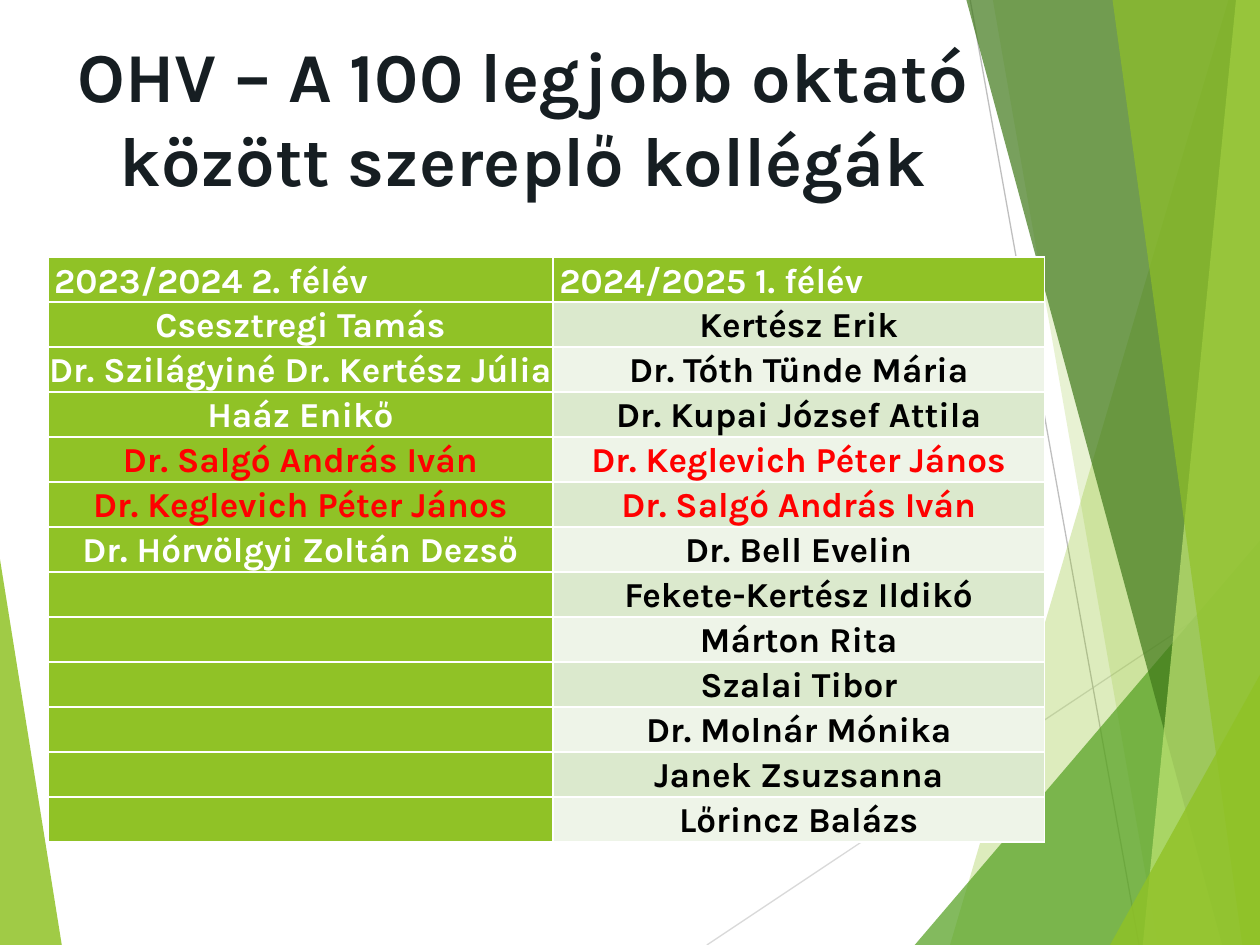
from typing import NamedTuple

from lxml import etree
from pptx import Presentation
from pptx.dml.color import RGBColor
from pptx.enum.shapes import MSO_CONNECTOR
from pptx.enum.text import MSO_ANCHOR, MSO_AUTO_SIZE, PP_ALIGN
from pptx.oxml.ns import qn
from pptx.util import Inches, Pt

STRAIGHT = MSO_CONNECTOR.STRAIGHT
TOP, MIDDLE, BOTTOM = MSO_ANCHOR.TOP, MSO_ANCHOR.MIDDLE, MSO_ANCHOR.BOTTOM
LEFT, CENTER = PP_ALIGN.LEFT, PP_ALIGN.CENTER
FIT_SHAPE = MSO_AUTO_SIZE.SHAPE_TO_FIT_TEXT

WIDTH, HEIGHT = Inches(10), Inches(7.5)
FONT = "Karla"
GREEN, WHITE, BLACK, RED = "90C226", "FFFFFF", "000000", "FF0000"
BANDS = ("DBE9CD", "EEF4E8")
COLUMN_WIDTHS = (4.01, 3.9)
ROW_HEIGHT = 0.34

Point = tuple[float, float]


class Facet(NamedTuple):
    """Corners are percentages of the slide's width and height."""
    corners: list[Point]
    color: str
    opacity: int


class Ray(NamedTuple):
    start: Point
    end: Point
    color: str


def band(top: float, bottom: float) -> list[Point]:
    """Area from a slanted left edge to the slide's right edge."""
    return [(top, 0), (bottom, 100), (100, 100), (100, 0)]


def corner(left: float, top: float) -> list[Point]:
    """Triangle in the lower right corner of the slide."""
    return [(left, 100), (100, top), (100, 100)]


LEFT_FACET = Facet([(0, 59.2), (4.9, 100), (0, 100)], GREEN, 85)
RAYS = [
    Ray((56.1, 100), (100, 61), "D9D9D9"),
    Ray((77, 0), (90.4, 100), "BFBFBF"),
]
RIGHT_FACETS = [
    Facet(band(97.5, 75.4), GREEN, 30),
    Facet(band(78.8, 91.9), GREEN, 20),
    Facet(corner(72.6, 57.2), "54A021", 72),
    Facet(band(76.7, 97), "3F7819", 70),
    Facet(band(98.1, 90.7), "C0E474", 70),
    Facet(band(88.3, 98.6), GREEN, 65),
    Facet(corner(88.1, 71.4), GREEN, 80),
]

HEADERS = ("2023/2024 2. félév", "2024/2025 1. félév")
HIGHLIGHTED = {"Dr. Salgó András Iván", "Dr. Keglevich Péter János"}
FIRST_TERM = [
    "Csesztregi Tamás",
    "Dr. Szilágyiné Dr. Kertész Júlia",
    "Haáz Enikő",
    "Dr. Salgó András Iván",
    "Dr. Keglevich Péter János",
    "Dr. Hórvölgyi Zoltán Dezső",
]
SECOND_TERM = [
    "Kertész Erik",
    "Dr. Tóth Tünde Mária",
    "Dr. Kupai József Attila",
    "Dr. Keglevich Péter János",
    "Dr. Salgó András Iván",
    "Dr. Bell Evelin",
    "Fekete-Kertész Ildikó",
    "Márton Rita",
    "Szalai Tibor",
    "Dr. Molnár Mónika",
    "Janek Zsuzsanna",
    "Lőrincz Balázs",
]


def rgb(color: str) -> RGBColor:
    return RGBColor.from_string(color)


def on_slide(point: Point) -> tuple[int, int]:
    x, y = point
    return round(WIDTH * x / 100), round(HEIGHT * y / 100)


def set_font(paragraph, size: int, color: str) -> None:
    font = paragraph.font
    font.name, font.size, font.bold = FONT, Pt(size), True
    font.color.rgb = rgb(color)


def draw_facet(slide, facet: Facet) -> None:
    start, *others = map(on_slide, facet.corners)
    builder = slide.shapes.build_freeform(*start)
    builder.add_line_segments(others, close=True)
    shape = builder.convert_to_shape()
    shape.shadow.inherit = False
    shape.line.fill.background()
    shape.fill.solid()
    shape.fill.fore_color.rgb = rgb(facet.color)
    color_element = shape.fill._xPr.find(f".//{qn('a:srgbClr')}")
    etree.SubElement(color_element, qn("a:alpha"), val=str(facet.opacity * 1000))


def draw_ray(slide, ray: Ray) -> None:
    connector = slide.shapes.add_connector(
        STRAIGHT, *on_slide(ray.start), *on_slide(ray.end))
    connector.line.color.rgb = rgb(ray.color)
    connector.line.width = Pt(0.75)
    etree.SubElement(connector._element.spPr, qn("a:effectLst"))


def write_title(slide, text: str) -> None:
    title = slide.shapes.title
    title.left, title.top = Inches(0.51), Inches(0.21)
    title.width, title.height = Inches(7.28), Inches(1.45)
    frame = title.text_frame
    frame.text = text
    frame.word_wrap, frame.auto_size = True, FIT_SHAPE
    frame.vertical_anchor = TOP
    paragraph = frame.paragraphs[0]
    paragraph.alignment = CENTER
    set_font(paragraph, 40, "161E22")


def fill_cell(cell, text: str, fill: str, color: str, is_header: bool) -> None:
    cell.fill.solid()
    cell.fill.fore_color.rgb = rgb(fill)
    cell.margin_left = cell.margin_right = Inches(0.05 if is_header else 0)
    cell.margin_top = cell.margin_bottom = 0
    cell.vertical_anchor = BOTTOM if is_header else MIDDLE
    cell.text = text
    paragraph = cell.text_frame.paragraphs[0]
    paragraph.alignment = LEFT if is_header else CENTER
    paragraph.line_spacing, paragraph.space_after = 1.07, Pt(8)
    set_font(paragraph, 20, color)


def draw_table(slide) -> None:
    row_count = 1 + max(len(FIRST_TERM), len(SECOND_TERM))
    table = slide.shapes.add_table(
        row_count, len(HEADERS), Inches(0.38), Inches(2.04),
        Inches(sum(COLUMN_WIDTHS)), Inches(ROW_HEIGHT * row_count)).table
    table.first_col = True
    for row in table.rows:
        row.height = Inches(ROW_HEIGHT)
    for column, names in enumerate((FIRST_TERM, SECOND_TERM)):
        table.columns[column].width = Inches(COLUMN_WIDTHS[column])
        fill_cell(table.cell(0, column), HEADERS[column], GREEN, WHITE, True)
        for index in range(row_count - 1):
            name = names[index] if index < len(names) else ""
            fill = BANDS[index % 2] if column else GREEN
            plain_color = BLACK if column else WHITE
            color = RED if name in HIGHLIGHTED else plain_color
            fill_cell(table.cell(index + 1, column), name, fill, color, False)


def main() -> None:
    presentation = Presentation()
    presentation.slide_width, presentation.slide_height = WIDTH, HEIGHT
    slide = presentation.slides.add_slide(presentation.slide_layouts[5])
    draw_facet(slide, LEFT_FACET)
    for ray in RAYS:
        draw_ray(slide, ray)
    for facet in RIGHT_FACETS:
        draw_facet(slide, facet)
    write_title(slide, "OHV – A 100 legjobb oktató között szereplő kollégák")
    draw_table(slide)
    presentation.save("out.pptx")


if __name__ == "__main__":
    main()
